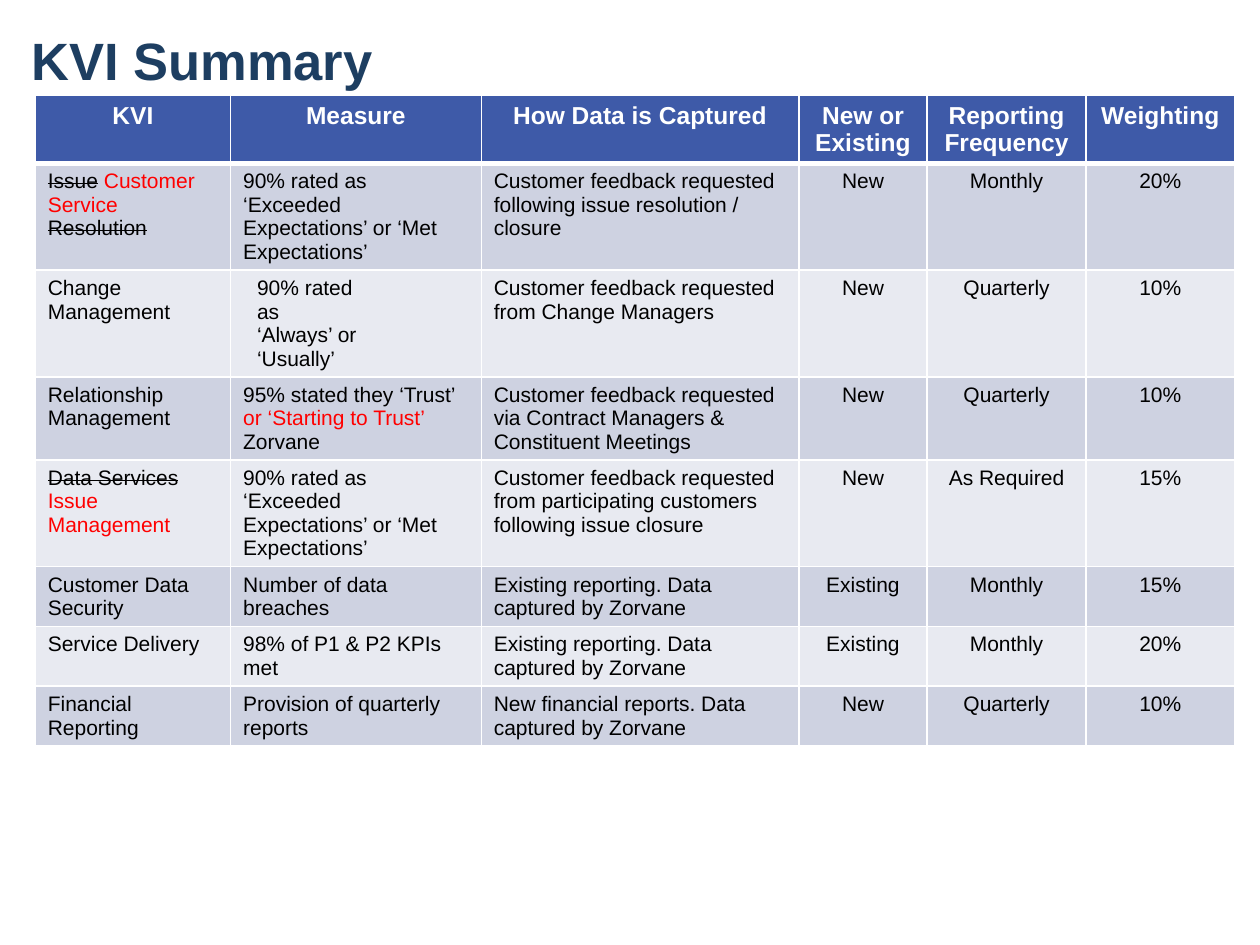
from lxml.etree import SubElement
from pptx import Presentation
from pptx.dml.color import RGBColor
from pptx.enum.text import MSO_ANCHOR, PP_ALIGN
from pptx.oxml.ns import qn
from pptx.util import Inches, Pt

FONT = "Arial"
NAVY = RGBColor(0x1D, 0x3E, 0x61)
BLUE = RGBColor(0x3E, 0x5A, 0xA8)
BAND_DARK = RGBColor(0xCE, 0xD2, 0xE1)
BAND_LIGHT = RGBColor(0xE8, 0xEA, 0xF1)
WHITE = RGBColor(0xFF, 0xFF, 0xFF)
BLACK = RGBColor(0, 0, 0)
RED = RGBColor(0xFF, 0, 0)

COL_WIDTHS = [1.55, 1.99, 2.52, 1.02, 1.26, 1.18]
ROW_HEIGHT = 0.41
FIRST_CENTRED_COL = 3

# Kinds of marked text: a run is a plain string or a (text, kind) pair
NEW, OLD = "new", "old"

HEADERS = ["KVI", "Measure", "How Data is Captured", "New or Existing",
           "Reporting Frequency", "Weighting"]
EXCEEDED = "90% rated as ‘Exceeded Expectations’ or ‘Met Expectations’"
FEEDBACK = "Customer feedback requested "
CAPTURED = "Data captured by Zorvane"
ROWS = [
    [[("Issue", OLD), " ", ("Customer Service ", NEW), ("Resolution", OLD)],
     EXCEEDED, FEEDBACK + "following issue resolution / closure",
     "New", "Monthly", "20%"],
    ["Change Management", ["90% rated as", "\n", "‘Always’ or ‘Usually’"],
     FEEDBACK + "from Change Managers", "New", "Quarterly", "10%"],
    ["Relationship Management",
     ["95% stated they ‘Trust’ ", ("or ‘Starting to Trust’ ", NEW), "Zorvane"],
     FEEDBACK + "via Contract Managers & Constituent Meetings",
     "New", "Quarterly", "10%"],
    [[("Data Services ", OLD), ("Issue Management", NEW)], EXCEEDED,
     FEEDBACK + "from participating customers following issue closure",
     "New", "As Required", "15%"],
    ["Customer Data Security", "Number of data breaches",
     "Existing reporting. " + CAPTURED, "Existing", "Monthly", "15%"],
    ["Service Delivery", "98% of P1 & P2 KPIs met",
     "Existing reporting. " + CAPTURED, "Existing", "Monthly", "20%"],
    ["Financial Reporting", "Provision of quarterly reports",
     "New financial reports. " + CAPTURED, "New", "Quarterly", "10%"],
]
INDENTED_CELL = (2, 1)


def add_run(p, text, size, color, bold=False, strike=False):
    r = p.add_run()
    r.text = text
    r.font.name, r.font.size, r.font.bold = FONT, Pt(size), bold
    r.font.color.rgb = color
    if strike:
        r.font._element.set("strike", "sngStrike")


def add_title(slide, text):
    sp = slide.shapes.title
    sp.left, sp.top = Inches(0.25), Inches(-0.06)
    sp.width, sp.height = Inches(9.5), Inches(1.06)
    tf = sp.text_frame
    tf.margin_left = tf.margin_right = tf.margin_top = tf.margin_bottom = 0
    tf.vertical_anchor = MSO_ANCHOR.MIDDLE
    p = tf.paragraphs[0]
    p.alignment = PP_ALIGN.LEFT
    add_run(p, text, 30, NAVY, bold=True)


def set_borders(cell, bottom):
    tc_pr = cell._tc.get_or_add_tcPr()
    widths = {"a:lnL": 1, "a:lnR": 1, "a:lnT": 1, "a:lnB": bottom}
    for i, (tag, width) in enumerate(widths.items()):
        ln = SubElement(tc_pr, qn(tag), w=str(Pt(width)))
        fill = SubElement(ln, qn("a:solidFill"))
        SubElement(fill, qn("a:srgbClr"), val=str(WHITE))
        tc_pr.insert(i, ln)


def fill_cell(cell, content, fill, size, color, bold, centred, bottom=1):
    cell.fill.solid()
    cell.fill.fore_color.rgb = fill
    set_borders(cell, bottom)
    p = cell.text_frame.paragraphs[0]
    p.alignment = PP_ALIGN.CENTER if centred else PP_ALIGN.LEFT
    for part in [content] if isinstance(content, str) else content:
        text, kind = (part, None) if isinstance(part, str) else part
        if text == "\n":
            p.add_line_break()
        else:
            add_run(p, text, size, RED if kind == NEW else color, bold,
                    strike=kind == OLD)


def indent(cell, left, right):
    p_pr = cell.text_frame.paragraphs[0]._p.get_or_add_pPr()
    p_pr.set("marL", str(Inches(left)))
    p_pr.set("marR", str(Inches(right)))


def add_kvi_table(slide):
    n_rows = len(ROWS) + 1
    table = slide.shapes.add_table(
        n_rows, len(HEADERS), Inches(0.28), Inches(0.76),
        Inches(sum(COL_WIDTHS)), Inches(ROW_HEIGHT * n_rows)).table
    for col, width in zip(table.columns, COL_WIDTHS):
        col.width = Inches(width)
    for row in table.rows:
        row.height = Inches(ROW_HEIGHT)

    # Header row
    for c, text in enumerate(HEADERS):
        fill_cell(table.cell(0, c), text, BLUE, 14, WHITE, True, True, bottom=3)

    # Banded body rows
    for r, row in enumerate(ROWS, start=1):
        band = BAND_DARK if r % 2 else BAND_LIGHT
        for c, content in enumerate(row):
            fill_cell(table.cell(r, c), content, band, 12, BLACK, False,
                      c >= FIRST_CENTRED_COL)
    indent(table.cell(*INDENTED_CELL), 0.11, 0.83)


def main():
    prs = Presentation()
    prs.slide_width, prs.slide_height = Inches(10), Inches(7.5)
    slide = prs.slides.add_slide(prs.slide_layouts[5])
    add_title(slide, "KVI Summary")
    add_kvi_table(slide)
    prs.save("out.pptx")


if __name__ == "__main__":
    main()
